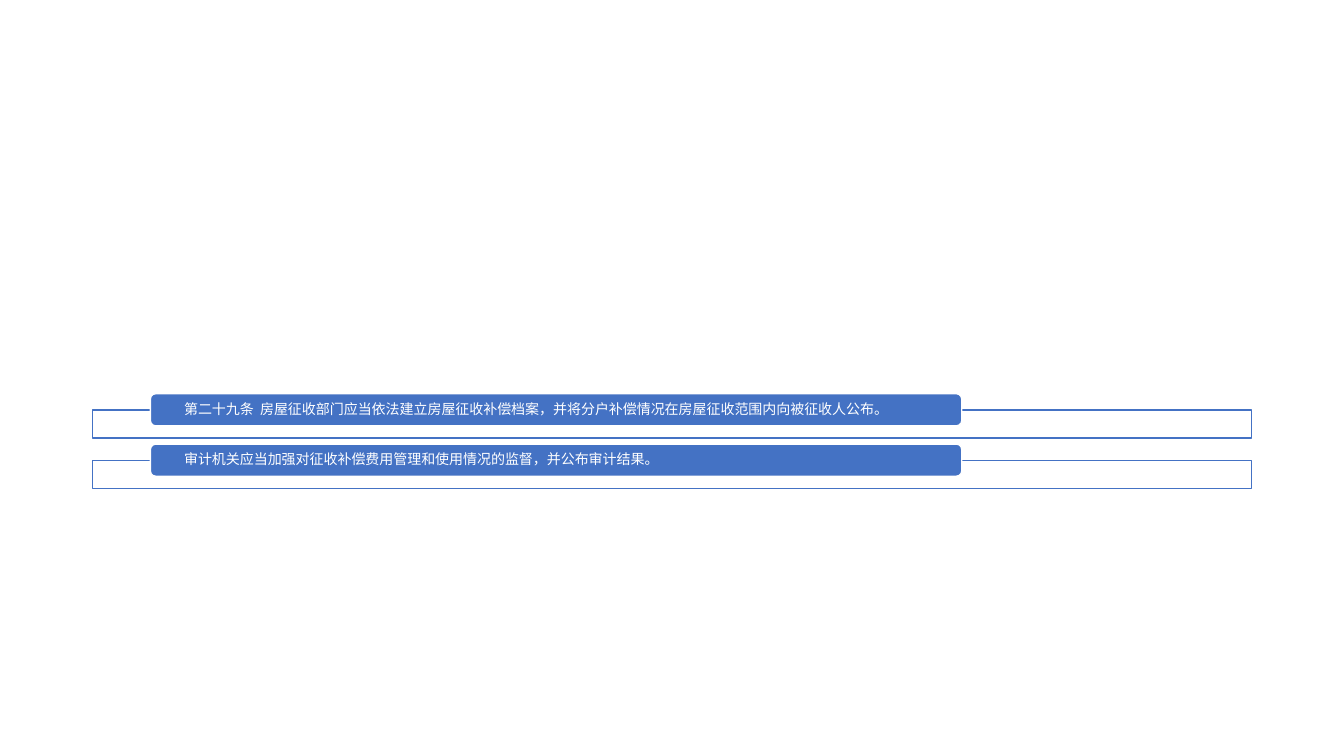
from pptx import Presentation
from pptx import util as u
from pptx.dml.color import RGBColor
from pptx.enum import shapes, text
from pptx.oxml.ns import qn
from lxml import etree

BLUE = RGBColor(0x44, 0x72, 0xC4)
WHITE = RGBColor(0xFF, 0xFF, 0xFF)
FONT = "Noto Sans CJK SC"
PITCH = 36
CLAUSES = [
    "第二十九条  房屋征收部门应当依法建立房屋征收补偿档案，并将分户补偿情况在房屋征收范围内向被征收人公布。",
    "审计机关应当加强对征收补偿费用管理和使用情况的监督，并公布审计结果。",
]


def add_box(parent, kind, box, fill, line):
    """Add a filled and outlined shape at box, given in points."""
    sp = parent.shapes.add_shape(kind, *(u.Pt(v) for v in box))
    sp.shadow.inherit = False
    sp.fill.solid()
    sp.fill.fore_color.rgb = fill
    sp.line.color.rgb = line
    sp.line.width = u.Pt(1)
    return sp


def add_label(sp, wording):
    """Write a clause into its heading bar."""
    tf = sp.text_frame
    frame = {"word_wrap": True, "vertical_anchor": text.MSO_ANCHOR.MIDDLE,
             "margin_left": u.Pt(23), "margin_right": u.Pt(23),
             "margin_top": 0, "margin_bottom": 0}
    for key, value in frame.items():
        setattr(tf, key, value)
    p = tf.paragraphs[0]
    p.alignment = text.PP_ALIGN.LEFT
    p.line_spacing = 0.9
    r = p.add_run()
    r.text = wording
    for key, value in {"name": FONT, "size": u.Pt(10)}.items():
        setattr(r.font, key, value)
    r.font.color.rgb = WHITE
    etree.SubElement(r.font._element, qn("a:ea"), typeface=FONT)


def add_clause(parent, box, wording):
    """Draw one clause: an open frame with a heading bar over its top edge."""
    x, y, w, h = box
    frame = add_box(parent, shapes.MSO_SHAPE.RECTANGLE, box, WHITE, BLUE)
    color = frame.fill._xPr.find(qn("a:solidFill"))[0]
    etree.SubElement(color, qn("a:alpha"), val="90000")
    bar = (x + w * 0.05, y - 11.8, w * 0.7, 23)
    sp = add_box(parent, shapes.MSO_SHAPE.ROUNDED_RECTANGLE, bar, BLUE, WHITE)
    add_label(sp, wording)


def add_clause_list(s, box):
    """Stack the clauses at an equal pitch, in one group."""
    x, y, w, h = box
    group = s.shapes.add_group_shape()
    for i, wording in enumerate(CLAUSES):
        add_clause(group, (x, y + i * PITCH, w, h), wording)


def main():
    """Build the slide and save it."""
    prs = Presentation()
    prs.slide_width, prs.slide_height = u.Pt(960), u.Pt(540)
    s = prs.slides.add_slide(prs.slide_layouts[6])
    add_clause_list(s, (66, 293, 828, 20))
    prs.save("out.pptx")


if __name__ == "__main__":
    main()
